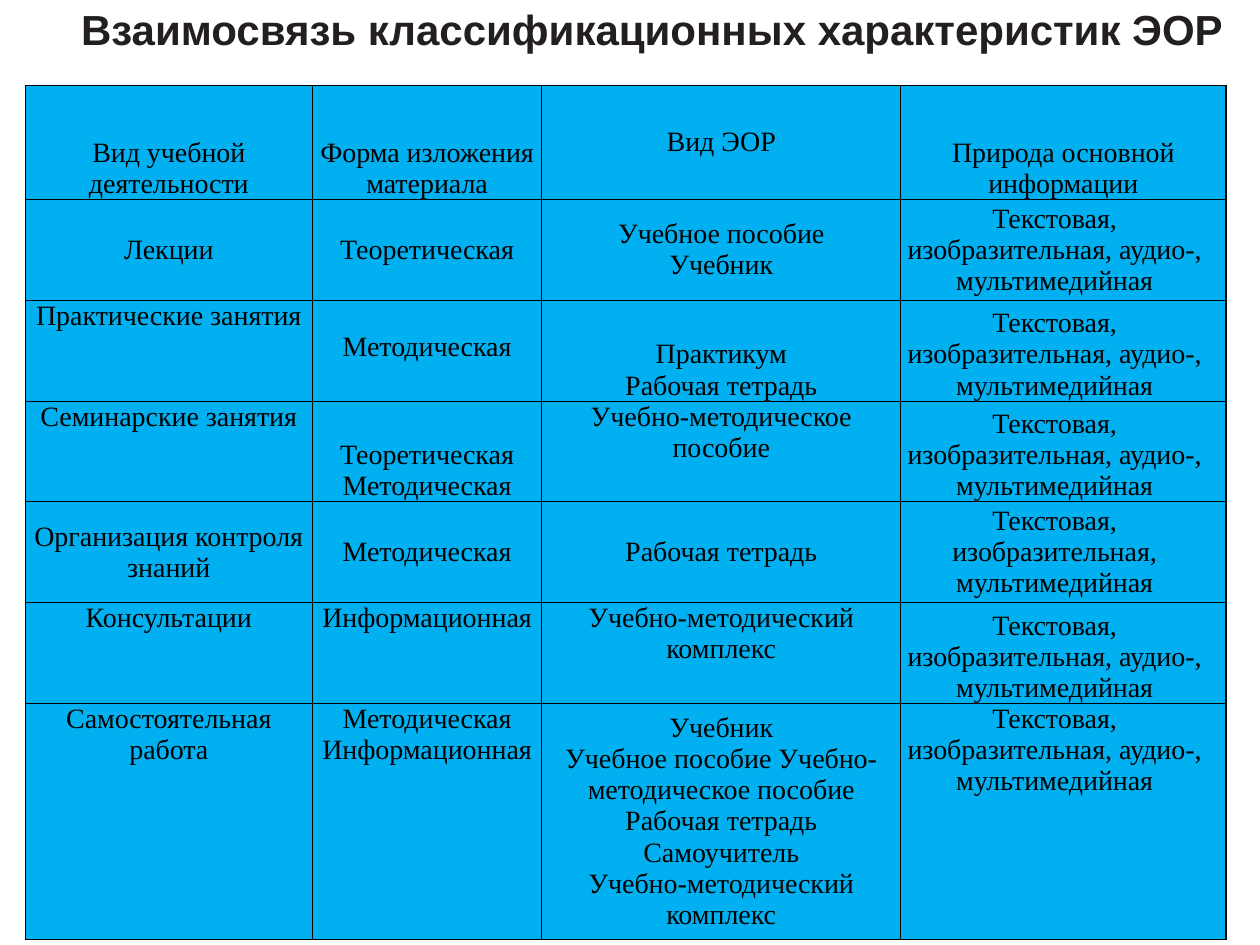
from lxml import etree
from pptx import Presentation
from pptx.dml.color import RGBColor
from pptx.enum.text import MSO_ANCHOR, MSO_AUTO_SIZE, PP_ALIGN
from pptx.oxml.ns import qn
from pptx.util import Pt

TOP, MID, LOW = MSO_ANCHOR.TOP, MSO_ANCHOR.MIDDLE, MSO_ANCHOR.BOTTOM
NONE = MSO_AUTO_SIZE.NONE
CENTER = PP_ALIGN.CENTER
BLUE = RGBColor(0x00, 0xB0, 0xF0)
BLACK = RGBColor(0x00, 0x00, 0x00)
DARK = RGBColor(0x23, 0x1F, 0x20)

MEDIA = "Текстовая, изобразительная, аудио-, мультимедийная"
WIDTHS = [164.2, 131, 205.2, 185.8]
HEIGHTS = [65.2] + [57.6] * 5 + [134.8]

# Each cell: text and vertical anchor
ROWS = [
    [("Вид учебной деятельности", LOW), ("Форма изложения материала", LOW),
     ("Вид ЭОР", MID), ("Природа основной информации", LOW)],
    [("Лекции", MID), ("Теоретическая", MID),
     ("Учебное пособие\nУчебник", MID), (MEDIA, MID)],
    [("Практические занятия", TOP), ("Методическая", TOP),
     ("Практикум\nРабочая тетрадь", LOW), (MEDIA, LOW)],
    [("Семинарские занятия", TOP), ("Теоретическая\nМетодическая", LOW),
     ("Учебно-методическое пособие", TOP), (MEDIA, LOW)],
    [("Организация контроля знаний", MID), ("Методическая", MID),
     ("Рабочая тетрадь", MID),
     ("Текстовая, изобразительная, мультимедийная", MID)],
    [("Консультации", TOP), ("Информационная", TOP),
     ("Учебно-методический комплекс", TOP), (MEDIA, LOW)],
    [("Самостоятельная работа", TOP), ("Методическая\nИнформационная", TOP),
     ("Учебник\nУчебное пособие Учебно-методическое пособие Рабочая тетрадь\n"
      "Самоучитель\nУчебно-методический комплекс", MID), (MEDIA, TOP)],
]


def style(par, name, size, color, bold):
    par.alignment = CENTER
    for run in par.runs:
        font = run.font
        font.name, font.size, font.bold = name, Pt(size), bold
        font.color.rgb = color


def border(cell):
    props = cell._tc.get_or_add_tcPr()
    for spot, side in enumerate(("lnL", "lnR", "lnT", "lnB")):
        line = etree.Element(qn("a:" + side), w=str(Pt(0.75)))
        fill = etree.SubElement(line, qn("a:solidFill"))
        etree.SubElement(fill, qn("a:srgbClr"), val=str(BLACK))
        props.insert(spot, line)


prs = Presentation()
prs.slide_width, prs.slide_height = Pt(720), Pt(540)
slide = prs.slides.add_slide(prs.slide_layouts[5])

# Title
title = slide.shapes.title
title.left, title.top = Pt(25.2), Pt(15.1)
title.width, title.height = Pt(694.8), Pt(19.5)
frame = title.text_frame
frame.text = "Взаимосвязь классификационных характеристик ЭОР"
frame.auto_size = NONE
frame.vertical_anchor = TOP
frame.paragraphs[0].line_spacing = Pt(12.3)
style(frame.paragraphs[0], "Arial", 24, DARK, True)

# Table grid
table = slide.shapes.add_table(len(ROWS), len(WIDTHS), Pt(14.4), Pt(48.8),
                               Pt(sum(WIDTHS)), Pt(sum(HEIGHTS))).table
for col, width in zip(table.columns, WIDTHS):
    col.width = Pt(width)
for row, height in zip(table.rows, HEIGHTS):
    row.height = Pt(height)

# Table cells
for r, row in enumerate(ROWS):
    for c, (text, anchor) in enumerate(row):
        cell = table.cell(r, c)
        cell.text_frame.text = text
        cell.vertical_anchor = anchor
        cell.margin_left = cell.margin_top = cell.margin_bottom = 0
        cell.margin_right = Pt(10 if r and c == 3 else 0)
        cell.fill.solid()
        cell.fill.fore_color.rgb = BLUE
        border(cell)
        for par in cell.text_frame.paragraphs:
            style(par, "Times New Roman", 16, BLACK, False)

# The form of practical classes sits one line lower
table.cell(2, 1).margin_top = Pt(17.7)

prs.save("out.pptx")
